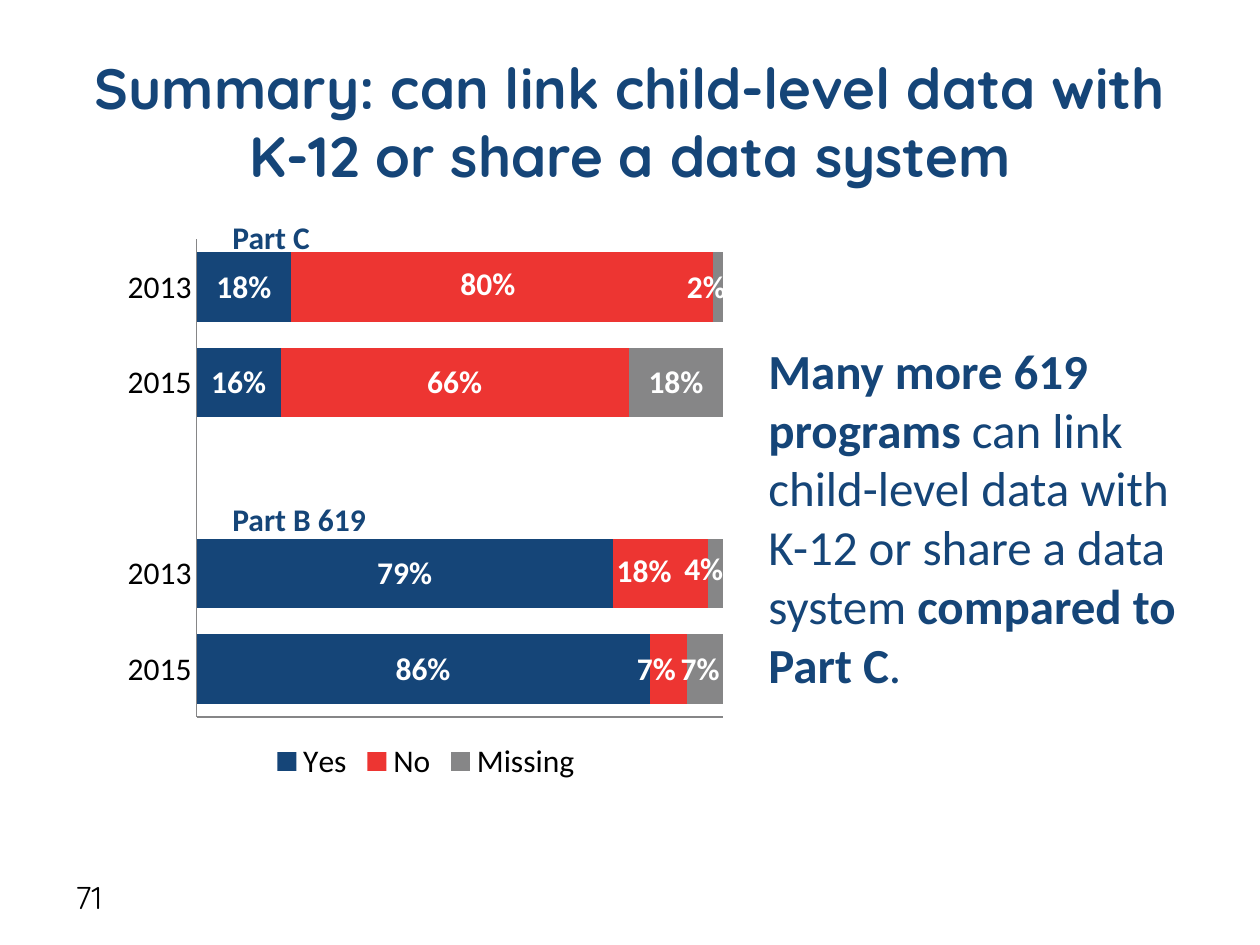
from lxml import etree
from pptx import Presentation, util as u
from pptx.chart.data import CategoryChartData
from pptx.dml.color import RGBColor
from pptx.enum import chart as charts, text
from pptx.oxml.ns import qn

SCALE = 914400 / 126
NAVY, RED, GRAY, WHITE, BLACK = "154578", "ED3532", "868687", "FFFFFF", "000000"
YEARS = ["2015", "2013", "", "2015", "2013"]
SERIES = {
    "Yes": (NAVY, [0.86, 0.79, None, 0.16, 0.18]),
    "No": (RED, [0.07, 0.18, None, 0.66, 0.80]),
    "Missing": (GRAY, [0.07, 0.04, None, 0.18, 0.02]),
}
# Label offsets in px, by series and category index
NUDGES = {
    "No": {0: (-12, 0), 1: (-16, -2), 4: (-14, -2)},
    "Missing": {0: (-5, 0), 1: (-12, -4), 4: (-12, 0)},
}


def px(value):
    return u.Emu(round(value * SCALE))


def color(value):
    return RGBColor.from_string(value)


def style(font, **values):
    """Set font attributes; size is in points and color is a hex string."""
    for name, value in values.items():
        if name == "color":
            font.color.rgb = color(value)
        else:
            setattr(font, name, u.Pt(value) if name == "size" else value)


def place(shape, box):
    for name, value in zip(("left", "top", "width", "height"), box):
        setattr(shape, name, px(value))


def write(shape, runs, anchor=text.MSO_ANCHOR.TOP, align=text.PP_ALIGN.LEFT, **values):
    frame = shape.text_frame
    frame.word_wrap = True
    frame.vertical_anchor = anchor
    para = frame.paragraphs[0]
    para.alignment = align
    for words, bold in runs:
        span = para.add_run()
        span.text = words
        style(span.font, bold=bold, **values)
    return para


def add_title(page, box, words):
    title = page.shapes.title
    place(title, box)
    write(title, [(words, True)], text.MSO_ANCHOR.MIDDLE, text.PP_ALIGN.CENTER,
          size=32.4, name="Quicksand", color=NAVY)
    title.text_frame.auto_size = text.MSO_AUTO_SIZE.NONE


def add_text(page, box, runs, **values):
    shape = page.shapes.add_textbox(*map(px, box))
    return write(shape, runs, **values)


def set_layout(parent, position, **values):
    """Put a manual layout, in fractions of the chart, at a child position."""
    for old in parent.findall(qn("c:layout")):
        parent.remove(old)
    layout = etree.Element(qn("c:layout"))
    manual = etree.SubElement(layout, qn("c:manualLayout"))
    for name, value in values.items():
        etree.SubElement(manual, qn("c:" + name)).set("val", str(value))
    parent.insert(position, layout)


def add_labels(series, width, height):
    font = dict(size=18, name="Calibri", bold=True, color=WHITE)
    labels = series.data_labels
    labels.show_value = True
    style(labels.font, **font)
    nudges = NUDGES.get(series.name, {})
    for index in nudges:
        style(series.points[index].data_label.font, **font)
    for label in series._element.iter(qn("c:dLbl")):
        index = int(label.find(qn("c:idx")).get("val"))
        across, down = nudges[index]
        set_layout(label, 1, x=round(across / width, 3), y=round(down / height, 3))


def add_bars(page, box):
    data = CategoryChartData(number_format="0%")
    data.categories = YEARS
    for name, (_, values) in SERIES.items():
        data.add_series(name, values)
    chart = page.shapes.add_chart(
        charts.XL_CHART_TYPE.BAR_STACKED, *map(px, box), data).chart
    style(chart.font, size=18, name="Calibri", color=BLACK)
    chart.has_title = False

    # Legend
    chart.has_legend = True
    chart.legend.position = charts.XL_LEGEND_POSITION.BOTTOM
    chart.legend.include_in_layout = False

    # Axes
    for axis in (chart.category_axis, chart.value_axis):
        axis.has_major_gridlines = False
        axis.major_tick_mark = axis.minor_tick_mark = charts.XL_TICK_MARK.NONE
        axis.format.line.color.rgb = color(GRAY)
        axis.format.line.width = u.Pt(0.75)
    scale = dict(minimum_scale=0, maximum_scale=1, major_unit=0.2,
                 tick_label_position=charts.XL_TICK_LABEL_POSITION.NONE)
    for name, value in scale.items():
        setattr(chart.value_axis, name, value)

    # Bars
    plot = chart.plots[0]
    plot.gap_width, plot.overlap, plot.vary_by_categories = 37, 100, False
    for series in plot.series:
        series.format.fill.solid()
        series.format.fill.fore_color.rgb = color(SERIES[series.name][0])
        add_labels(series, *box[2:])
    area = next(chart._chartSpace.iter(qn("c:plotArea")))
    set_layout(area, 0, layoutTarget="inner", xMode="edge", yMode="edge",
               x=0.13, y=0.02, w=0.85, h=0.855)


def add_comparison(page, box):
    left, top, width, height = box
    add_bars(page, box)
    for words, down, wide in (("Part B 619", 266, 179), ("Part C", -16, 107)):
        add_text(page, (left + 104, top + down, wide, 50), [(words, True)],
                 size=18, name="Calibri", color=NAVY)


def main():
    deck = Presentation()
    deck.slide_width, deck.slide_height = px(1260), px(945)
    page = deck.slides.add_slide(deck.slide_layouts[5])

    add_title(page, (63, 42, 1134, 157),
              "Summary: can link child-level data with K-12 or share a data system")
    add_comparison(page, (116, 228, 620, 559))

    # Takeaway
    takeaway = add_text(page, (756, 334, 462, 369), [
        ("Many more 619 programs", True),
        (" can link child-level data with K-12 or share a data system ", False),
        ("compared to Part C", True),
        (".", False),
    ], size=28, name="Calibri", color=NAVY)
    takeaway.space_before = u.Pt(5.6)

    # Page number
    add_text(page, (63, 872, 294, 50), [("71", False)], anchor=text.MSO_ANCHOR.MIDDLE,
             size=18, name="Quicksand", color=BLACK)
    deck.save("out.pptx")


if __name__ == "__main__":
    main()
